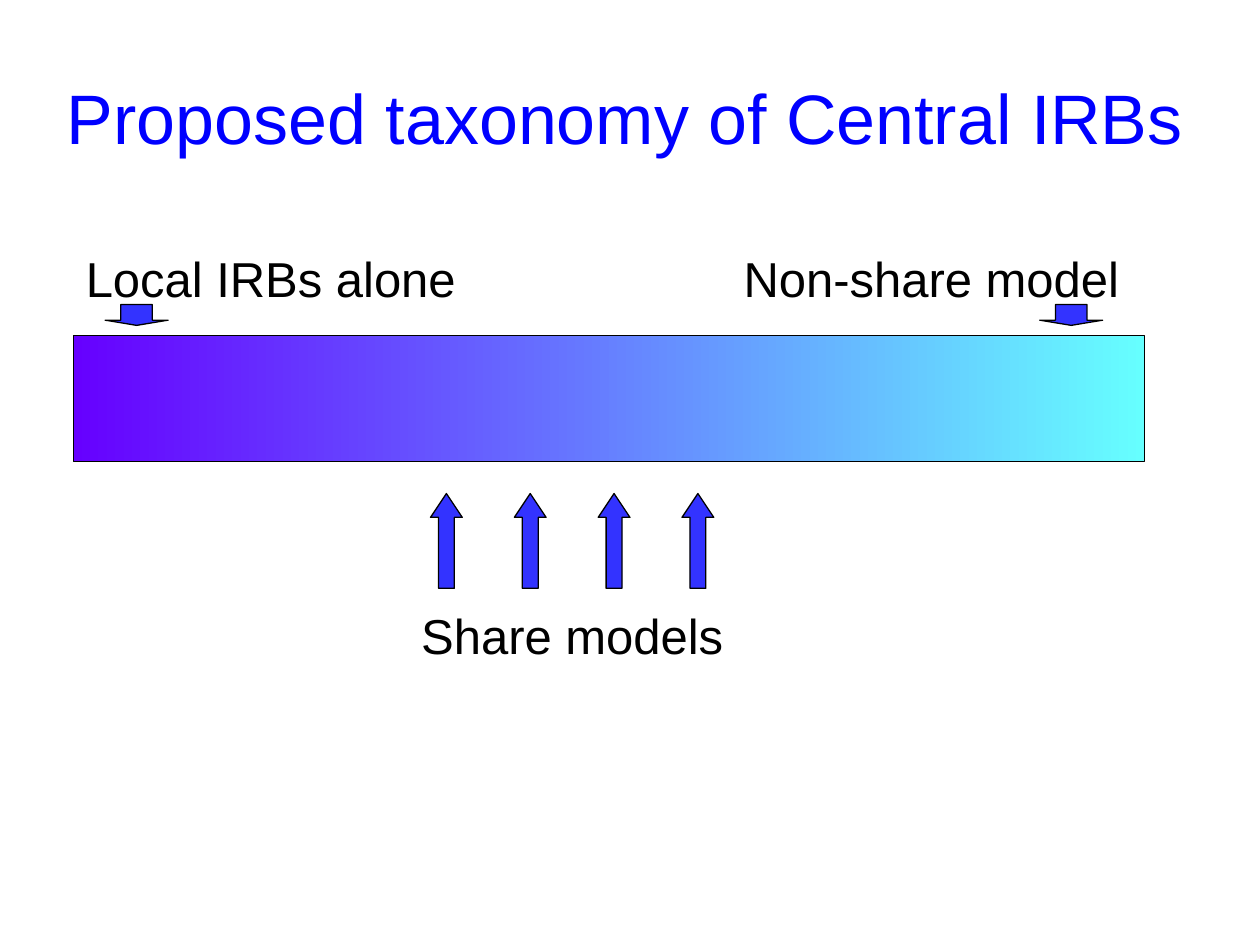
from dataclasses import dataclass

from lxml import etree
from pptx import Presentation
from pptx import util as u
from pptx.dml.color import RGBColor
from pptx.enum import shapes, text
from pptx.oxml.ns import qn


@dataclass(frozen=True)
class Theme:
    font: str = "Arial"
    title_size: int = 40
    label_size: int = 28
    title: str = "0000FF"
    ink: str = "000000"
    arrow: str = "3333FF"
    scale_start: str = "6600FF"
    scale_end: str = "66FFFF"
    line_width: float = 0.75


class SlideBuilder:
    def __init__(self, page, theme):
        self.page = page
        self.theme = theme

    def label(self, words, frame, size, color, align, tab=None):
        box = self.page.shapes.add_textbox(*map(u.Cm, frame))
        body = box.text_frame
        body.word_wrap = True
        body.vertical_anchor = text.MSO_ANCHOR.MIDDLE
        para = body.paragraphs[0]
        para.alignment = align
        if tab is not None:
            stops = etree.SubElement(para._p.get_or_add_pPr(), qn("a:tabLst"))
            etree.SubElement(stops, qn("a:tab"), pos=str(u.Cm(tab)), algn="l")
        for part in words:
            span = para.add_run()
            span.text = part
            span.font.name = self.theme.font
            span.font.size = u.Pt(size)
            span.font.color.rgb = RGBColor.from_string(color)

    def shape(self, kind, frame):
        shape = self.page.shapes.add_shape(kind, *map(u.Cm, frame))
        shape.shadow.inherit = False
        shape.line.color.rgb = RGBColor.from_string(self.theme.ink)
        shape.line.width = u.Pt(self.theme.line_width)
        return shape

    def scale(self, frame):
        bar = self.shape(shapes.MSO_SHAPE.RECTANGLE, frame)
        bar.fill.gradient()
        bar.fill.gradient_angle = 0
        ends = (self.theme.scale_start, self.theme.scale_end)
        for position, (stop, color) in enumerate(zip(bar.fill.gradient_stops, ends)):
            stop.position = position
            stop.color.rgb = RGBColor.from_string(color)

    def arrow(self, kind, frame, head):
        arrow = self.shape(kind, frame)
        arrow.adjustments[0] = 0.5
        arrow.adjustments[1] = head
        arrow.fill.solid()
        arrow.fill.fore_color.rgb = RGBColor.from_string(self.theme.arrow)


def main():
    deck = Presentation()
    deck.slide_width = u.Cm(25.4)
    deck.slide_height = u.Cm(19.05)
    theme = Theme()
    page = deck.slides.add_slide(deck.slide_layouts[6])
    builder = SlideBuilder(page, theme)
    left, center = text.PP_ALIGN.LEFT, text.PP_ALIGN.CENTER

    builder.label(["Proposed taxonomy of Central IRBs"], (0.43, 0.76, 24.33, 3.18),
                  theme.title_size, theme.title, center)
    builder.scale((1.48, 6.77, 21.59, 2.54))
    builder.label(["Local IRBs alone", "\t", "Non-share model"], (1.48, 4.88, 21.39, 1.45),
                  theme.label_size, theme.ink, left, tab=13.26)
    builder.label(["Share models"], (5.5, 12.07, 12.07, 1.45),
                  theme.label_size, theme.ink, center)

    for column in range(4):
        builder.arrow(shapes.MSO_SHAPE.UP_ARROW,
                      (8.68 + 1.69 * column, 9.95, 0.64, 1.91), head=0.75)
    for x in (2.12, 20.96):
        builder.arrow(shapes.MSO_SHAPE.DOWN_ARROW, (x, 6.14, 1.27, 0.42), head=0.25)

    deck.save("out.pptx")


if __name__ == "__main__":
    main()
